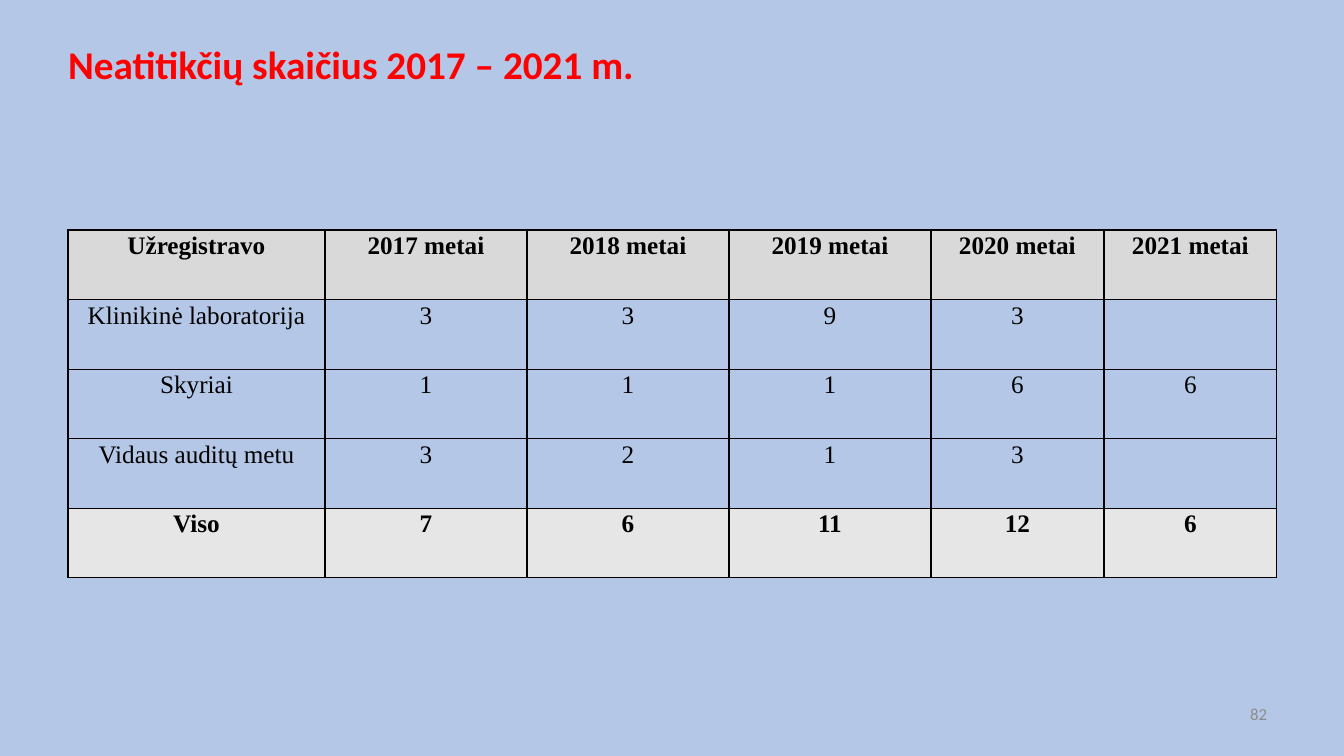
from dataclasses import dataclass

import pptx
import pptx.dml.color
import pptx.enum.text
import pptx.oxml
import pptx.oxml.ns
import pptx.util

PX = 12192000 / 1344  # EMU per px on a 1344 x 756 px slide
ALIGN = pptx.enum.text.PP_ALIGN
MIDDLE = pptx.enum.text.MSO_ANCHOR.MIDDLE


@dataclass(frozen=True)
class Theme:
    background: str = "B4C7E7"
    title: str = "FF0000"
    text: str = "000000"
    number: str = "8C8C8C"
    header_fill: str = "D9D9D9"
    total_fill: str = "E7E6E6"
    border: str = "000000"
    sans: str = "Calibri"
    serif: str = "Times New Roman"
    title_size: int = 28
    table_size: int = 18
    number_size: int = 12


THEME = Theme()

TITLE = "Neatitikčių skaičius 2017 – 2021 m."
COLUMN_WIDTHS = [257, 202, 202, 202, 173, 173]
ROWS = [
    ["Užregistravo"] + [f"{year} metai" for year in range(2017, 2022)],
    ["Klinikinė laboratorija", "3", "3", "9", "3", ""],
    ["Skyriai", "1", "1", "1", "6", "6"],
    ["Vidaus auditų metu", "3", "2", "1", "3", ""],
    ["Viso", "7", "6", "11", "12", "6"],
]


def px(n):
    return pptx.util.Emu(round(n * PX))


def rgb(color):
    return pptx.dml.color.RGBColor.from_string(color)


def write(tf, text, font, size, color, align, bold=False):
    """Put one paragraph in a text frame and return it."""
    p = tf.paragraphs[0]
    p.text = text
    p.alignment = align
    p.font.name = font
    p.font.size = pptx.util.Pt(size)
    p.font.bold = bold
    p.font.color.rgb = rgb(color)
    return p


def add_title(slide, text, x, y, w, h):
    sp = slide.shapes.title
    sp.left, sp.top, sp.width, sp.height = map(px, (x, y, w, h))
    tf = sp.text_frame
    tf.vertical_anchor = MIDDLE
    p = write(tf, text, THEME.sans, THEME.title_size, THEME.title, ALIGN.LEFT, True)
    p.line_spacing = 0.9


def add_slide_number(slide, number, x, y, w, h):
    tf = slide.shapes.add_textbox(*map(px, (x, y, w, h))).text_frame
    tf.word_wrap = True
    tf.vertical_anchor = MIDDLE
    write(tf, number, THEME.sans, THEME.number_size, THEME.number, ALIGN.RIGHT)


def set_borders(cell):
    tcPr = cell._tc.get_or_add_tcPr()
    for i, side in enumerate(("lnL", "lnR", "lnT", "lnB")):
        line = pptx.oxml.parse_xml(
            f'<a:{side} {pptx.oxml.ns.nsdecls("a")} w="{pptx.util.Pt(1)}">'
            f'<a:solidFill><a:srgbClr val="{THEME.border}"/></a:solidFill></a:{side}>'
        )
        tcPr.insert(i, line)  # borders come before the fill


def format_cell(cell, text, fill):
    """Fill a cell; rows with a fill colour are bold, the others are clear."""
    cell.margin_left = cell.margin_right = px(7)
    cell.margin_top = cell.margin_bottom = 0
    if fill:
        cell.fill.solid()
        cell.fill.fore_color.rgb = rgb(fill)
    else:
        cell.fill.background()
    set_borders(cell)
    p = write(cell.text_frame, text, THEME.serif, THEME.table_size, THEME.text,
              ALIGN.CENTER, bool(fill))
    p.line_spacing = 1.07
    p.space_after = pptx.util.Pt(8)


def add_table(slide, rows, widths, x, y, h):
    frame = slide.shapes.add_table(
        len(rows), len(widths), px(x), px(y), px(sum(widths)), px(h))
    table = frame.table
    for column, width in zip(table.columns, widths):
        column.width = px(width)
    fills = {0: THEME.header_fill, len(rows) - 1: THEME.total_fill}
    for i, row in enumerate(rows):
        for j, text in enumerate(row):
            format_cell(table.cell(i, j), text, fills.get(i))


def main():
    prs = pptx.Presentation()
    prs.slide_width, prs.slide_height = px(1344), px(756)
    slide = prs.slides.add_slide(prs.slide_layouts.get_by_name("Title Only"))
    slide.background.fill.solid()
    slide.background.fill.fore_color.rgb = rgb(THEME.background)

    add_title(slide, TITLE, 58, 4, 1038, 126)
    add_table(slide, ROWS, COLUMN_WIDTHS, 68, 230, 348)
    add_slide_number(slide, "82", 964, 688, 313, 52)
    prs.save("out.pptx")


if __name__ == "__main__":
    main()
